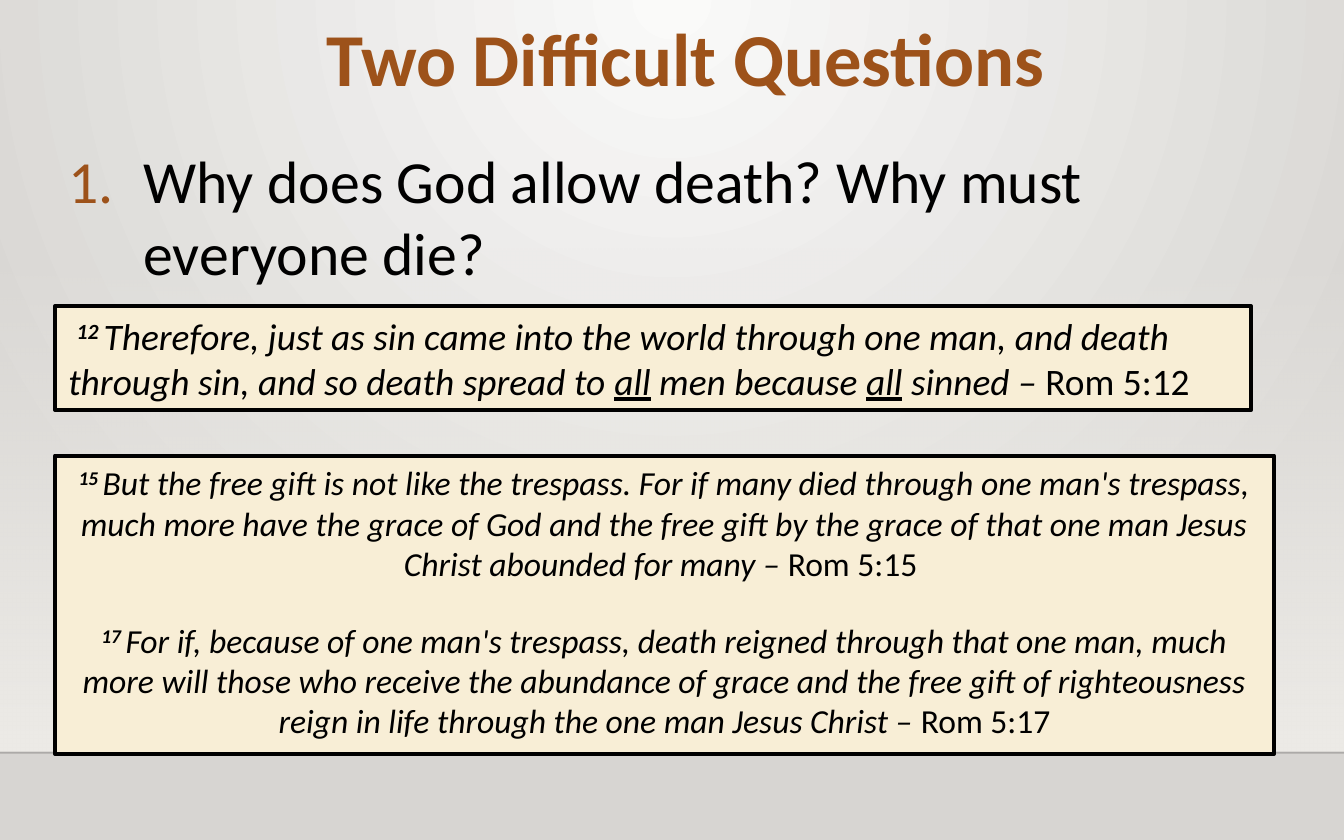
import pptx
import pptx.dml.color
import pptx.enum.shapes
import pptx.enum.text
import pptx.oxml
import pptx.oxml.ns
import pptx.util
from lxml import etree

Inches = pptx.util.Inches
Pt = pptx.util.Pt
ALIGN = pptx.enum.text.PP_ALIGN
ANCHOR = pptx.enum.text.MSO_ANCHOR

THEME = {
    "font": "Calibri", "accent": "9D521A", "ink": "000000",
    "card": "F8EED6", "wall": "EDEBE7", "light": "FAFAF9", "floor": "D7D5D2",
    "title": 40, "question": 32, "verse": 20, "verses": 18,
}

# Content: each verse is a list of (text, style) spans
TITLE = "Two Difficult Questions"
QUESTION = "Why does God allow death? Why must everyone die?"
VERSE_12 = [
    (" ", "plain"), ("12 ", "number"),
    ("Therefore, just as sin came into the world through one man, "
     "and death through sin, and so death spread to ", "quote"),
    ("all", "stress"), (" men because ", "quote"), ("all", "stress"),
    (" sinned – ", "quote"), ("Rom 5:12", "plain"),
]
VERSE_15 = [
    ("15 ", "number"),
    ("But the free gift is not like the trespass. For if many died through one "
     "man's trespass, much more have the grace of God and the free gift by the "
     "grace of that one man Jesus Christ abounded for many – ", "quote"),
    ("Rom 5:15 ", "plain"),
]
VERSE_17 = [
    ("17 ", "number"),
    ("For if, because of one man's trespass, death reigned through that one man, "
     "much more will those who receive the abundance of grace and the free gift of "
     "righteousness reign in life through the one man Jesus Christ – ", "quote"),
    ("Rom 5:17", "plain"),
]
# (left, top, width, height), verses, type size, alignment
CARDS = [
    ((0.41, 2.28, 8.9, 0.77), [VERSE_12], THEME["verse"], ALIGN.LEFT),
    ((0.41, 3.39, 9.07, 2.22), [VERSE_15, VERSE_17], THEME["verses"], ALIGN.CENTER),
]
VERSE_GAP = 19.5
FLOOR_TOP = 5.6


def color(name):
    return pptx.dml.color.RGBColor.from_string(THEME[name])


def gradient(stops, direction):
    """Gradient fill from (position, colour, opacity) stops, in percent."""
    stop_xml = "".join(
        f'<a:gs pos="{place * 1000}"><a:srgbClr val="{THEME[name]}">'
        f'<a:alpha val="{opacity * 1000}"/></a:srgbClr></a:gs>'
        for place, name, opacity in stops)
    return pptx.oxml.parse_xml(
        f'<a:gradFill {pptx.oxml.ns.nsdecls("a")} rotWithShape="1">'
        f"<a:gsLst>{stop_xml}</a:gsLst>{direction}</a:gradFill>")


def set_gradient(fill, parent, new_fill):
    fill.solid()
    old_fill = parent.find(pptx.oxml.ns.qn("a:solidFill"))
    parent.replace(old_fill, new_fill)


def add_span(para, text, size, ink="ink", style="plain"):
    span = para.add_run()
    span.text = text
    font = span.font
    font.name, font.size = THEME["font"], Pt(size)
    font.color.rgb = color(ink)
    font.bold = style == "number"
    font.italic = style != "plain"
    font.underline = style == "stress"
    if style == "number":
        font._element.set("baseline", "30000")
    return span


def add_text_box(page, place, anchor):
    box = page.shapes.add_textbox(*map(Inches, place))
    box.text_frame.word_wrap = True
    box.text_frame.vertical_anchor = anchor
    return box.text_frame.paragraphs[0]


def add_rectangle(page, place):
    box = page.shapes.add_shape(
        pptx.enum.shapes.MSO_SHAPE.RECTANGLE, *map(Inches, place))
    box.shadow.inherit = False
    return box


def add_backdrop(page):
    # Radial glow from the top centre
    fill = page.background.fill
    fill.solid()
    set_gradient(
        fill, page.background._cSld.bg.bgPr,
        gradient([(0, "light", 100), (100, "floor", 100)],
                 '<a:path path="circle"><a:fillToRect l="43000" t="0" '
                 'r="43000" b="100000"/></a:path>'))
    # Wall that fades in towards the floor
    wall = add_rectangle(page, (0, 1.84, 10, 3.75))
    wall.line.fill.background()
    set_gradient(
        wall.fill, wall._element.spPr,
        gradient([(0, "wall", 0), (100, "wall", 100)],
                 '<a:lin ang="5400000" scaled="0"/>'))
    # Floor edge
    edge = page.shapes.add_connector(
        pptx.enum.shapes.MSO_CONNECTOR.STRAIGHT,
        Inches(0), Inches(FLOOR_TOP), Inches(10), Inches(FLOOR_TOP))
    edge.line.width = Pt(1)
    edge.line.color.rgb = color("ink")
    tint = edge._element.spPr.find(".//" + pptx.oxml.ns.qn("a:srgbClr"))
    etree.SubElement(tint, pptx.oxml.ns.qn("a:alpha"), val="20000")
    etree.SubElement(edge._element.spPr, pptx.oxml.ns.qn("a:effectLst"))


def add_question(page):
    para = add_text_box(page, (0.41, 1.02, 9.33, 1.18), ANCHOR.TOP)
    layout = para._p.get_or_add_pPr()
    layout.set("marL", str(Inches(0.56)))
    layout.set("indent", str(Inches(-0.56)))
    bullet_color = etree.SubElement(layout, pptx.oxml.ns.qn("a:buClr"))
    etree.SubElement(bullet_color, pptx.oxml.ns.qn("a:srgbClr"), val=THEME["accent"])
    etree.SubElement(layout, pptx.oxml.ns.qn("a:buAutoNum"), type="arabicPeriod")
    add_span(para, QUESTION, THEME["question"])


def add_title(page):
    para = add_text_box(page, (0.47, 0.07, 9.26, 0.74), ANCHOR.BOTTOM)
    para.alignment = ALIGN.CENTER
    para.line_spacing = 0.9
    add_span(para, TITLE, THEME["title"], "accent").font.bold = True


def add_card(page, place, verses, size, alignment):
    box = add_rectangle(page, place)
    box.fill.solid()
    box.fill.fore_color.rgb = color("card")
    box.line.color.rgb = color("ink")
    box.line.width = Pt(2.25)
    frame = box.text_frame
    frame.word_wrap = True
    frame.vertical_anchor = ANCHOR.TOP
    for number, verse in enumerate(verses):
        para = frame.add_paragraph() if number else frame.paragraphs[0]
        para.alignment = alignment
        if number:
            para.space_before = Pt(VERSE_GAP)
        for text, style in verse:
            add_span(para, text, size, style=style)


def main():
    deck = pptx.Presentation()
    deck.slide_width, deck.slide_height = Inches(10), Inches(6.25)
    page = deck.slides.add_slide(deck.slide_layouts[6])
    add_backdrop(page)
    add_question(page)
    add_title(page)
    for card in CARDS:
        add_card(page, *card)
    deck.save("out.pptx")


if __name__ == "__main__":
    main()
